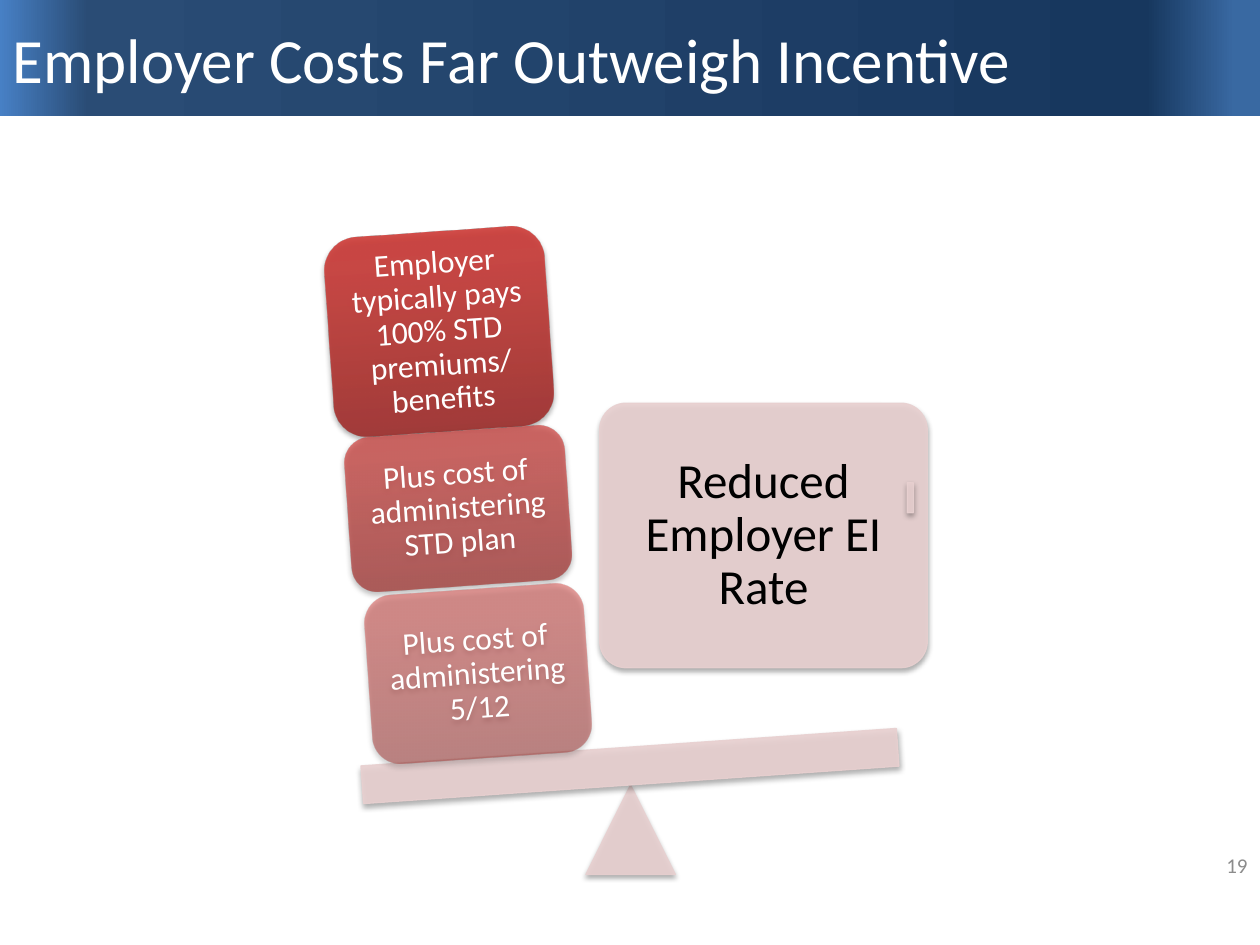
from lxml import etree
from pptx import Presentation
from pptx import util as u
from pptx.dml.color import RGBColor
from pptx.enum import shapes, text
from pptx.oxml import parse_xml
from pptx.oxml.ns import nsdecls, qn

KIND = shapes.MSO_SHAPE
ALIGN = text.PP_ALIGN
PINK = "E8D0D0"
RED = [(0, "9C2F2D"), (80, "CB3E3A"), (100, "CE3B37")]
BLUE = [(2, "3969A2"), (9, "17375E"), (93, "2A4C75"), (100, "4780C5")]
TILT = -4


def color(code):
    return RGBColor.from_string(code)


def fade(fill, alpha):
    """Make a solid fill partly transparent; alpha is percent opaque."""
    tint = fill._xPr.find(qn("a:solidFill"))[0]
    etree.SubElement(tint, qn("a:alpha")).set("val", str(alpha * 1000))


def blend(shape, stops, angle, alpha=100):
    """Fill a shape with a linear gradient of (percent, colour) stops."""
    marks = "".join(
        f'<a:gs pos="{pos * 1000}"><a:srgbClr val="{code}">'
        f'<a:alpha val="{alpha * 1000}"/></a:srgbClr></a:gs>'
        for pos, code in stops)
    grad = parse_xml(
        f'<a:gradFill {nsdecls("a")} rotWithShape="1"><a:gsLst>{marks}</a:gsLst>'
        f'<a:lin ang="{angle * 60000}" scaled="0"/></a:gradFill>')
    shape._element.spPr.find(qn("a:prstGeom")).addnext(grad)


def shade(shape):
    """Give a shape a soft shadow straight below it."""
    effects = shape._element.spPr.find(qn("a:effectLst"))
    effects.append(parse_xml(
        f'<a:outerShdw {nsdecls("a")} blurRad="{u.Pt(3.1)}" dist="{u.Pt(1.8)}"'
        ' dir="5400000" rotWithShape="0"><a:srgbClr val="000000">'
        '<a:alpha val="35000"/></a:srgbClr></a:outerShdw>'))


def place(slide, kind, box, turn=0, adj=None):
    shape = slide.shapes.add_shape(kind, *map(u.Inches, box))
    shape.rotation = turn
    if adj is not None:
        shape.adjustments[0] = adj
    shape.line.fill.background()
    shape.shadow.inherit = False
    return shape


def pale(slide, kind, box, **form):
    """Add a pink see-through shape with a thin line and a shadow."""
    shape = place(slide, kind, box, **form)
    for fill in (shape.fill, shape.line.fill):
        fill.solid()
        fill.fore_color.rgb = color(PINK)
        fade(fill, 90)
    shape.line.width = u.Pt(0.75)
    shade(shape)
    return shape


def write(shape, words, size, code, align=ALIGN.CENTER, space=None, inset=None):
    frame = shape.text_frame
    frame.word_wrap = True
    frame.auto_size = text.MSO_AUTO_SIZE.NONE
    frame.vertical_anchor = text.MSO_ANCHOR.MIDDLE
    if inset is not None:
        frame.margin_left = frame.margin_right = u.Inches(inset)
        frame.margin_top = frame.margin_bottom = u.Inches(inset)
    frame.text = words
    para = frame.paragraphs[0]
    para.alignment = align
    para.line_spacing = space
    font = para.runs[0].font
    font.name = "Calibri"
    font.size = u.Pt(size)
    font.color.rgb = color(code)


def head(slide, words):
    box = (0, 0, 10, 0.92)
    band = place(slide, KIND.RECTANGLE, box)
    blend(band, BLUE, 180)
    title = slide.shapes.title
    title.left, title.top, title.width, title.height = map(u.Inches, box)
    write(title, words, 36, "FFFFFF", align=ALIGN.LEFT)
    band._element.addnext(title._element)


def weight(slide, words, box, alpha):
    """Add one tilted red block of the stack."""
    block = place(slide, KIND.ROUNDED_RECTANGLE, box, turn=TILT)
    blend(block, RED, 270, alpha)
    shade(block)
    write(block, words, 18, "FFFFFF", space=0.9, inset=0.07)


def scale(slide):
    """Draw the seesaw with the costs on the left and the rate on the right."""
    rate = pale(slide, KIND.ROUNDED_RECTANGLE, (4.76, 3.2, 2.6, 2.1), adj=0.1)
    write(rate, "Reduced Employer EI Rate", 28, "000000", space=0.9, inset=0.12)
    pale(slide, KIND.ROUNDED_RECTANGLE, (7.2, 3.83, 0.05, 0.24), adj=0.1)
    pale(slide, KIND.ISOSCELES_TRIANGLE, (4.65, 6.23, 0.71, 0.71))
    pale(slide, KIND.RECTANGLE, (2.87, 5.93, 4.26, 0.3), turn=TILT)
    costs = [
        ("Employer typically pays 100% STD premiums/ benefits",
         (2.61, 1.84, 1.75, 1.58), 90),
        ("Plus cost of administering STD plan", (2.76, 3.42, 1.75, 1.23), 70),
        ("Plus cost of administering 5/12", (2.92, 4.68, 1.74, 1.34), 50),
    ]
    for words, box, alpha in costs:
        weight(slide, words, box, alpha)


def main():
    deck = Presentation()
    deck.slide_width, deck.slide_height = u.Inches(10), u.Inches(7.5)
    slide = deck.slides.add_slide(deck.slide_layouts[5])
    head(slide, "Employer Costs Far Outweigh Incentive")
    scale(slide)
    page = slide.shapes.add_textbox(*map(u.Inches, (7.67, 6.67, 2.33, 0.4)))
    write(page, "19", 12, "8C8C8C", align=ALIGN.RIGHT)
    deck.save("out.pptx")


if __name__ == "__main__":
    main()
